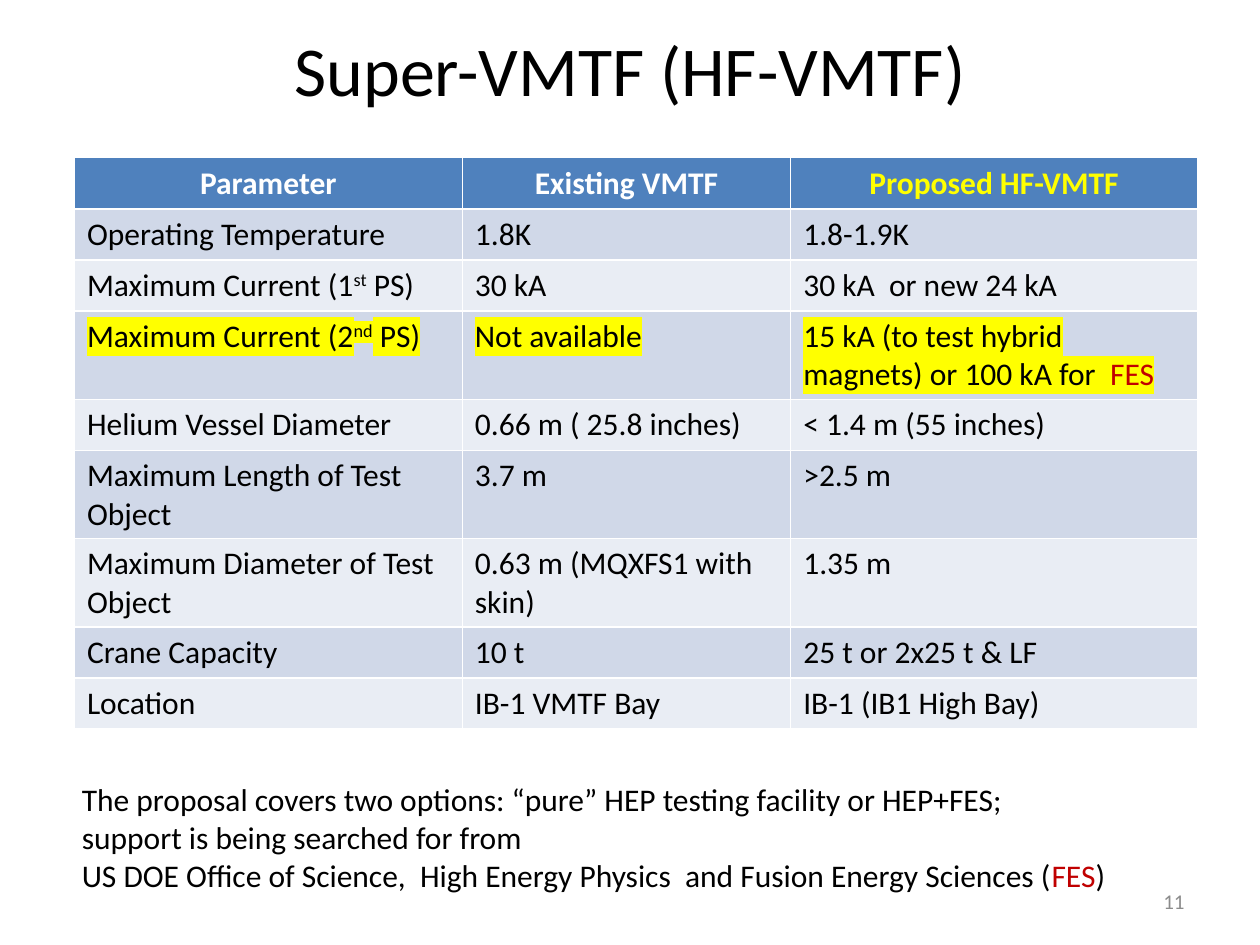
import pptx
import pptx.util
import pptx.dml.color
import pptx.enum.text
import pptx.oxml
import pptx.oxml.ns

Cm = pptx.util.Cm
ALIGN = pptx.enum.text.PP_ALIGN
ANCHOR = pptx.enum.text.MSO_ANCHOR

# Content: a text is a list of (words, style) spans
TITLE = "Super-VMTF (HF-VMTF)"
PAGE_NUMBER = "11"
HEADERS = ["Parameter", "Existing VMTF", "Proposed HF-VMTF"]
ROWS = [
    ["Operating Temperature", "1.8K", "1.8-1.9K"],
    [[("Maximum Current (1", ""), ("st", "super"), (" PS)", "")], "30 kA", "30 kA  or new 24 kA"],
    [[("Maximum Current (2", ""), ("nd", "super"), (" PS)", "")], "Not available",
     [("15 kA (to test hybrid magnets) or 100 kA for  ", ""), ("FES", "accent")]],
    ["Helium Vessel Diameter", "0.66 m ( 25.8 inches)", "< 1.4 m (55 inches)"],
    ["Maximum Length of Test Object", "3.7 m", ">2.5 m"],
    ["Maximum Diameter of Test Object", "0.63 m (MQXFS1 with  skin)", "1.35 m"],
    ["Crane Capacity", "10 t", "25 t or 2x25 t & LF"],
    ["Location", "IB-1 VMTF Bay", "IB-1 (IB1 High Bay)"],
]
HIGHLIGHTED_ROW = 3
NOTES = [
    "The proposal covers two options: “pure” HEP testing facility or HEP+FES;",
    "support is being searched for from",
    [("US DOE Office of Science,  High Energy Physics  and Fusion Energy Sciences (", ""),
     ("FES", "accent"), (")", "")],
]

THEME = {
    "font": "Calibri", "title": 40, "body": 18, "number": 12,
    "text": "000000", "light": "FFFFFF", "accent": "C00000", "marker": "FFFF00",
    "muted": "8C8C8C", "header": "4F81BD", "bands": ["D0D8E8", "E9EDF4"],
}
COLUMN_WIDTHS = [7.82, 6.62, 8.2]
ROW_HEIGHT = 1.03


def color(name):
    return pptx.dml.color.RGBColor.from_string(THEME.get(name, name))


def format_span(span, size, ink, bold=False):
    span.font.name = THEME["font"]
    span.font.size = pptx.util.Pt(THEME[size])
    span.font.bold = bold
    span.font.color.rgb = color(ink)


def highlight(span):
    fill = span._r.get_or_add_rPr().find(pptx.oxml.ns.qn("a:solidFill"))
    fill.addnext(pptx.oxml.parse_xml(
        f'<a:highlight {pptx.oxml.ns.nsdecls("a")}>'
        f'<a:srgbClr val="{THEME["marker"]}"/></a:highlight>'))


def write(para, content, size="body", ink="text", bold=False, align=ALIGN.LEFT, marked=False):
    """Fill a paragraph with plain words or styled spans."""
    para.alignment = align
    spans = [(content, "")] if isinstance(content, str) else content
    for words, style in spans:
        span = para.add_run()
        span.text = words
        format_span(span, size, "accent" if style == "accent" else ink, bold)
        if style == "super":
            span._r.get_or_add_rPr().set("baseline", "30000")
        if marked:
            highlight(span)


def add_box(page, left, top, width, height):
    box = page.shapes.add_textbox(Cm(left), Cm(top), Cm(width), Cm(height))
    box.text_frame.word_wrap = True
    return box.text_frame


def add_title(page):
    title = page.shapes.title
    title.left, title.top, title.width, title.height = Cm(1.27), Cm(-0.2), Cm(22.86), Cm(3.18)
    title.text_frame.text = TITLE
    title.text_frame.vertical_anchor = ANCHOR.MIDDLE
    para = title.text_frame.paragraphs[0]
    para.alignment = ALIGN.CENTER
    format_span(para.runs[0], "title", "text")


def add_parameters(page):
    count = len(ROWS) + 1
    table = page.shapes.add_table(count, len(HEADERS), Cm(1.5), Cm(3.18),
                                  Cm(sum(COLUMN_WIDTHS)), Cm(count * ROW_HEIGHT)).table
    for column, width in zip(table.columns, COLUMN_WIDTHS):
        column.width = Cm(width)
    for r, row in enumerate([HEADERS] + ROWS):
        table.rows[r].height = Cm(ROW_HEIGHT)
        for c, content in enumerate(row):
            cell = table.cell(r, c)
            cell.fill.solid()
            para = cell.text_frame.paragraphs[0]
            if r == 0:
                cell.fill.fore_color.rgb = color("header")
                ink = "marker" if c == len(HEADERS) - 1 else "light"
                write(para, content, ink=ink, bold=True, align=ALIGN.CENTER)
            else:
                cell.fill.fore_color.rgb = color(THEME["bands"][(r - 1) % 2])
                write(para, content, marked=r == HIGHLIGHTED_ROW)


def add_notes(page):
    frame = add_box(page, 1.4, 15.6, 22, 2.56)
    for i, content in enumerate(NOTES):
        write(frame.paragraphs[0] if i == 0 else frame.add_paragraph(), content)


def add_page_number(page):
    frame = add_box(page, 18.2, 17.65, 5.93, 1.02)
    frame.vertical_anchor = ANCHOR.MIDDLE
    write(frame.paragraphs[0], PAGE_NUMBER, size="number", ink="muted", align=ALIGN.RIGHT)


def main():
    deck = pptx.Presentation()
    deck.slide_width, deck.slide_height = Cm(25.4), Cm(19.05)
    page = deck.slides.add_slide(deck.slide_layouts[5])
    add_title(page)
    add_page_number(page)
    add_parameters(page)
    add_notes(page)
    deck.save("out.pptx")


if __name__ == "__main__":
    main()
